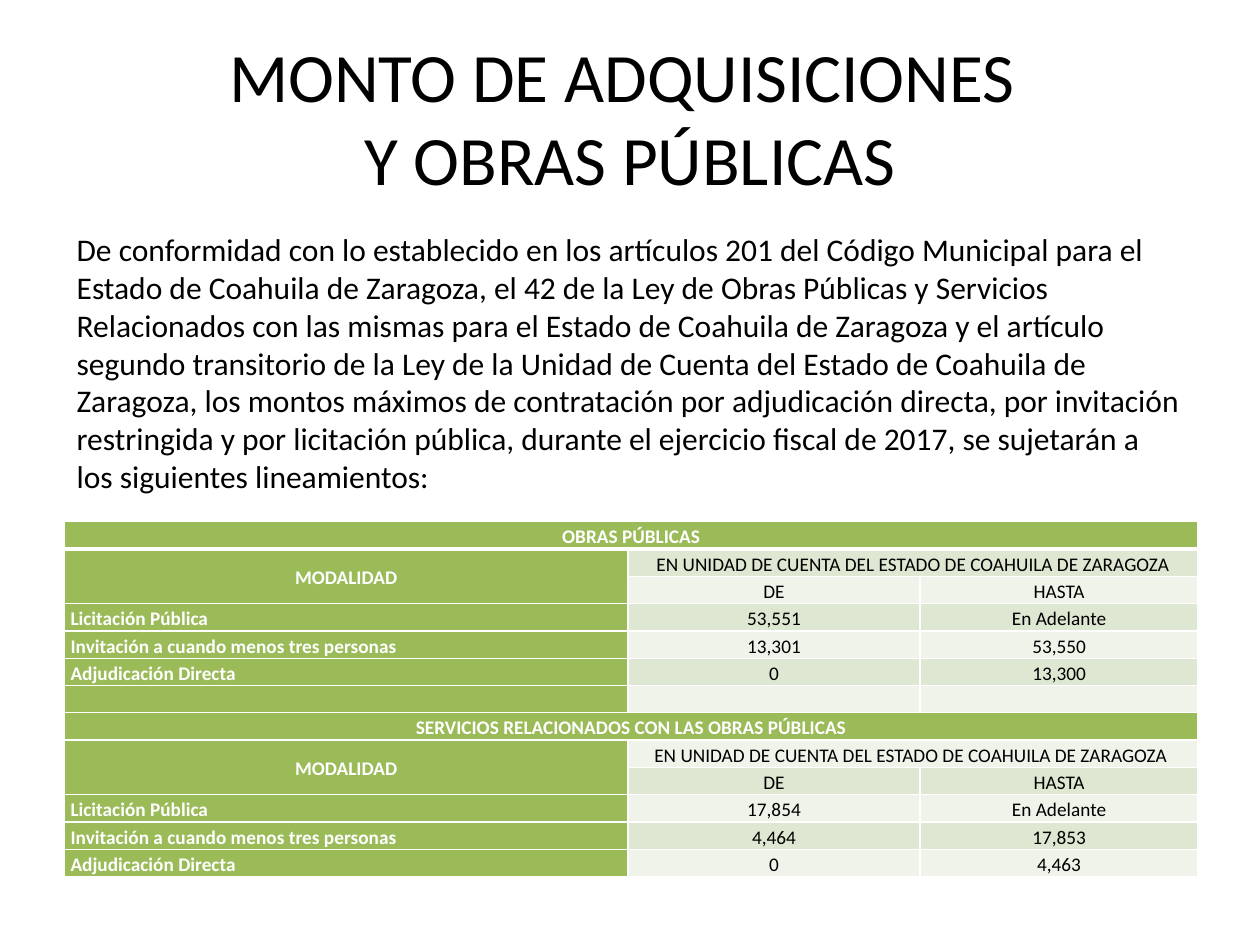
from dataclasses import dataclass

from lxml.etree import SubElement
from pptx import Presentation
from pptx.dml.color import RGBColor
from pptx.enum.text import MSO_ANCHOR, PP_ALIGN
from pptx.oxml.ns import qn
from pptx.util import Inches, Pt


@dataclass(frozen=True)
class Theme:
    font: str = "Calibri"
    ink: str = "000000"
    paper: str = "FFFFFF"
    heading: str = "9BBB59"
    bands: tuple = ("EFF3EA", "DEE7D1")
    title_size: float = 39.6
    body_size: float = 18
    table_size: float = 11
    rule: float = 1
    heading_rule: float = 3


THEME = Theme()
TITLE = "MONTO DE ADQUISICIONES \vY OBRAS PÚBLICAS"
INTRODUCTION = (
    "De conformidad con lo establecido en los artículos 201 del Código Municipal para el "
    "Estado de Coahuila de Zaragoza, el 42 de la Ley de Obras Públicas y Servicios "
    "Relacionados con las mismas para el Estado de Coahuila de Zaragoza y el artículo "
    "segundo transitorio de la Ley de la Unidad de Cuenta del Estado de Coahuila de "
    "Zaragoza, los montos máximos de contratación por adjudicación directa, por invitación "
    "restringida y por licitación pública, durante el ejercicio fiscal de 2017, se sujetarán a "
    "los siguientes lineamientos:"
)
UNIT = "EN UNIDAD DE CUENTA DEL ESTADO DE COAHUILA DE ZARAGOZA"
MODALITIES = (
    "Licitación Pública",
    "Invitación a cuando menos tres personas",
    "Adjudicación Directa",
)
SECTIONS = (
    ("OBRAS PÚBLICAS", UNIT,
     (("53,551", "En Adelante"), ("13,301", "53,550"), ("0", "13,300"))),
    ("SERVICIOS RELACIONADOS CON LAS OBRAS PÚBLICAS", UNIT + " ",
     (("17,854", "En Adelante"), ("4,464", "17,853"), ("0", "4,463"))),
)
COLUMN_WIDTHS = (4.48, 2.32, 2.21)
HEADING_ROWS = 3
SECTION_STEP = HEADING_ROWS + len(MODALITIES) + 1


def write(frame, text, *, size, color=THEME.ink, bold=False, align=PP_ALIGN.LEFT, spacing=None):
    frame.word_wrap = True
    paragraph = frame.paragraphs[0]
    paragraph.text = text
    paragraph.alignment = align
    paragraph.line_spacing = spacing
    for run in paragraph.runs:
        run.font.name = THEME.font
        run.font.size = Pt(size)
        run.font.bold = bold
        run.font.color.rgb = RGBColor.from_string(color)
    if not text:
        paragraph._p.get_or_add_endParaRPr().set("sz", str(size * 100))


def set_borders(cell, **widths):
    properties = cell._tc.get_or_add_tcPr()
    for side in "LRTB":
        width = Pt(widths.get(side, THEME.rule))
        line = SubElement(properties, qn(f"a:ln{side}"), w=str(width))
        fill = SubElement(line, qn("a:solidFill"))
        SubElement(fill, qn("a:srgbClr"), val=THEME.paper)


def place(shape, box):
    shape.left, shape.top, shape.width, shape.height = box


def add_title(slide, box):
    title = slide.shapes.title
    place(title, box)
    title.text_frame.vertical_anchor = MSO_ANCHOR.MIDDLE
    write(title.text_frame, TITLE, size=THEME.title_size, align=PP_ALIGN.CENTER)


def add_introduction(slide, box):
    introduction = slide.shapes.add_textbox(*box)
    write(introduction.text_frame, INTRODUCTION, size=THEME.body_size)


def amount_rows():
    """Rows of both sections, with one empty row between them."""
    rows = []
    for heading, unit, limits in SECTIONS:
        if rows:
            rows.append(("", "", ""))
        rows += [(heading, "", ""), ("MODALIDAD", unit, ""), ("", "DE", "HASTA")]
        rows += [(modality, *limit) for modality, limit in zip(MODALITIES, limits)]
    return rows


def style_cell(cell, text, row, column):
    section_row = row % SECTION_STEP
    is_heading = column == 0 or section_row == 0
    is_modality = column == 0 and section_row >= HEADING_ROWS
    cell.margin_left = cell.margin_right = Inches(0.05)
    cell.margin_top = cell.margin_bottom = 0
    cell.vertical_anchor = MSO_ANCHOR.MIDDLE
    heading_edge = {0: "B", 1: "T"}.get(row)
    set_borders(cell, **({heading_edge: THEME.heading_rule} if heading_edge else {}))
    cell.fill.solid()
    cell.fill.fore_color.rgb = RGBColor.from_string(
        THEME.heading if is_heading else THEME.bands[row % 2])
    write(cell.text_frame, text, size=THEME.table_size, bold=is_heading, spacing=1.15,
          color=THEME.paper if is_heading else THEME.ink,
          align=PP_ALIGN.LEFT if is_modality else PP_ALIGN.CENTER)


def add_amounts_table(slide, box):
    rows = amount_rows()
    width, height = box[2:]
    table = slide.shapes.add_table(len(rows), len(COLUMN_WIDTHS), *box).table
    for column, share in zip(table.columns, COLUMN_WIDTHS):
        column.width = int(width * share / sum(COLUMN_WIDTHS))
    for row in table.rows:
        row.height = height // len(rows)
    for r, texts in enumerate(rows):
        for c, text in enumerate(texts):
            style_cell(table.cell(r, c), text, r, c)
    for top in range(0, len(rows), SECTION_STEP):
        table.cell(top, 0).merge(table.cell(top, 2))
        table.cell(top + 1, 0).merge(table.cell(top + 2, 0))
        table.cell(top + 1, 1).merge(table.cell(top + 1, 2))


def main():
    presentation = Presentation()
    presentation.slide_width, presentation.slide_height = Inches(10), Inches(7.5)
    slide = presentation.slides.add_slide(presentation.slide_layouts[5])

    def share(left, top, width, height):
        return (int(presentation.slide_width * left), int(presentation.slide_height * top),
                int(presentation.slide_width * width), int(presentation.slide_height * height))

    add_title(slide, share(0.05, 0.04, 0.9, 1 / 6))
    add_amounts_table(slide, share(0.051, 0.552, 0.9, 0.373))
    add_introduction(slide, share(0.051, 0.237, 0.898, 0.296))
    presentation.save("out.pptx")


if __name__ == "__main__":
    main()
